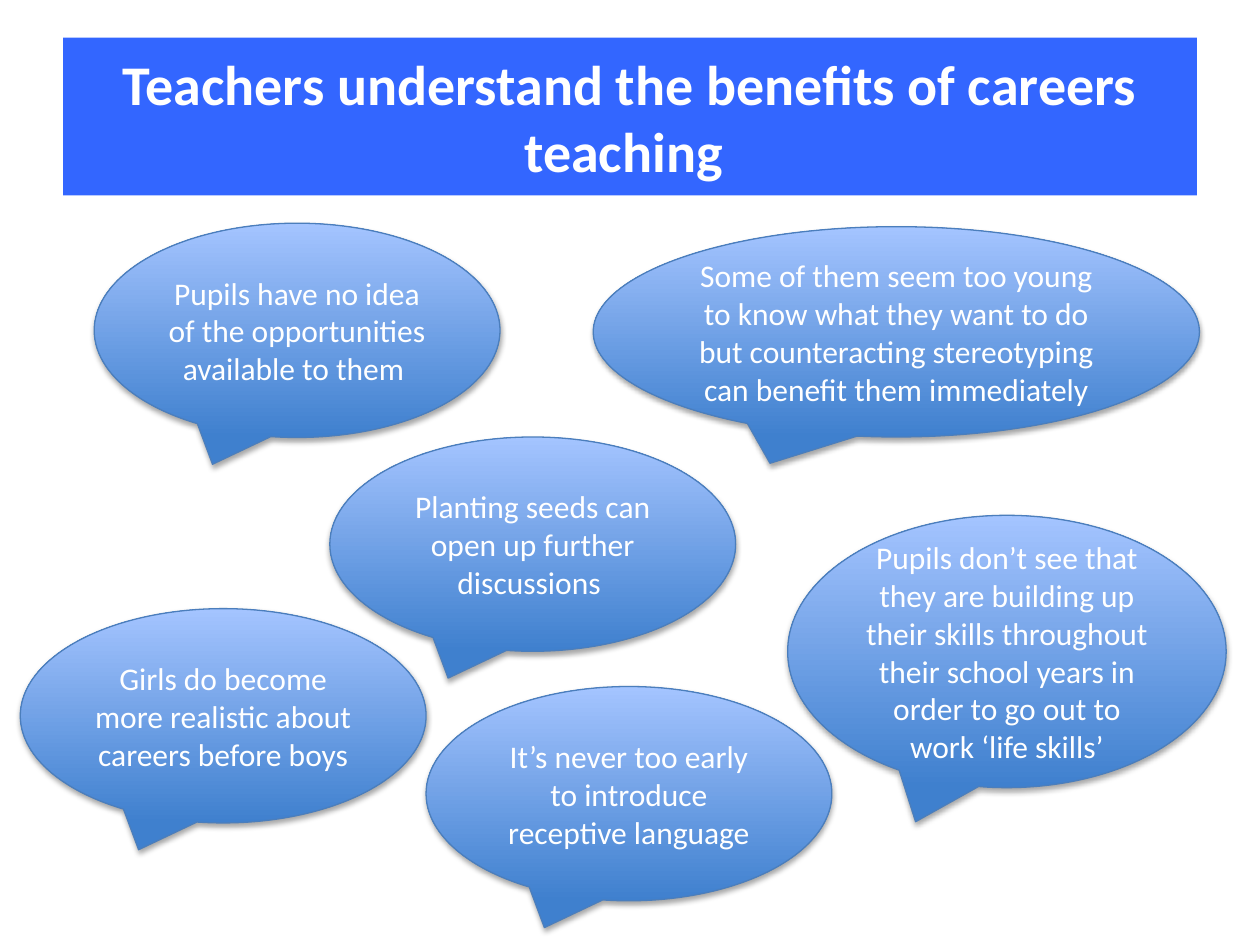
from lxml import etree
from pptx import Presentation
from pptx.dml.color import RGBColor
from pptx.enum.shapes import MSO_SHAPE
from pptx.enum.text import MSO_ANCHOR, PP_ALIGN
from pptx.oxml import parse_xml
from pptx.util import Cm, Pt

BUBBLE = MSO_SHAPE.OVAL_CALLOUT
MIDDLE = MSO_ANCHOR.MIDDLE
CENTER = PP_ALIGN.CENTER

WHITE = RGBColor(0xFF, 0xFF, 0xFF)
BLUE = RGBColor(0x33, 0x66, 0xFF)
DARK = RGBColor(0x3F, 0x80, 0xCE)
LIGHT = RGBColor(0xA4, 0xC4, 0xFF)
EDGE = RGBColor(0x4B, 0x7E, 0xBC)
FONT = "Calibri"
NS = "http://schemas.openxmlformats.org/drawingml/2006/main"

# Content: text, left, top, size (cm)
TITLE = "Teachers understand the benefits of careers teaching "
USUAL = (8.18, 4.32)
QUOTES = [
    ("Pupils have no idea of the opportunities available to them ",
     1.9, 4.5, USUAL),
    ("Some of them seem too young to know what they want to do "
     "but counteracting stereotyping can benefit them immediately",
     11.96, 4.57, (12.22, 4.24)),
    ("It’s never too early to introduce receptive language",
     8.59, 13.84, USUAL),
    ("Girls do become more realistic about careers before boys",
     0.41, 12.27, USUAL),
    ("Pupils don’t see that they are building up their skills throughout "
     "their school years in order to go out to work ‘life skills’",
     15.88, 10.39, (8.84, 5.49)),
    ("Planting seeds can open up further discussions ",
     6.65, 8.81, USUAL),
]


def write(shape, text, size=18, bold=False, color=WHITE):
    frame = shape.text_frame
    frame.word_wrap = True
    frame.vertical_anchor = MIDDLE
    para = frame.paragraphs[0]
    para.alignment = CENTER
    run = para.add_run()
    run.text = text
    font = run.font
    font.name, font.size, font.bold = FONT, Pt(size), bold
    font.color.rgb = color


def shade(shape):
    """Give the shape a soft shadow below."""
    shape.shadow.inherit = False
    effects = shape._element.spPr.find(f"{{{NS}}}effectLst")
    effects.append(parse_xml(
        f'<a:outerShdw xmlns:a="{NS}" blurRad="{Pt(3.1)}" dist="{Pt(1.8)}" '
        'dir="5400000" rotWithShape="0"/>'))
    color = etree.SubElement(effects[0], f"{{{NS}}}srgbClr", val="000000")
    etree.SubElement(color, f"{{{NS}}}alpha", val="35000")


def bubble(slide, text, left, top, size):
    shape = slide.shapes.add_shape(
        BUBBLE, *(Cm(v) for v in (left, top, *size)))
    shape.fill.gradient()
    shape.fill.gradient_angle = 90
    for stop, color, place in zip(shape.fill.gradient_stops,
                                  (DARK, LIGHT), (0, 1)):
        stop.color.rgb = color
        stop.position = place
    shape.line.color.rgb = EDGE
    shape.line.width = Pt(0.75)
    shade(shape)
    write(shape, text)


def main():
    deck = Presentation()
    deck.slide_width, deck.slide_height = Cm(25.4), Cm(19.05)
    slide = deck.slides.add_slide(deck.slide_layouts[5])

    # Title band
    title = slide.shapes.title
    title.left, title.top = Cm(1.27), Cm(0.76)
    title.width, title.height = Cm(22.86), Cm(3.18)
    title.fill.solid()
    title.fill.fore_color.rgb = BLUE
    write(title, TITLE, size=32, bold=True)

    # Speech bubbles
    for quote in QUOTES:
        bubble(slide, *quote)

    deck.save("out.pptx")


if __name__ == "__main__":
    main()
